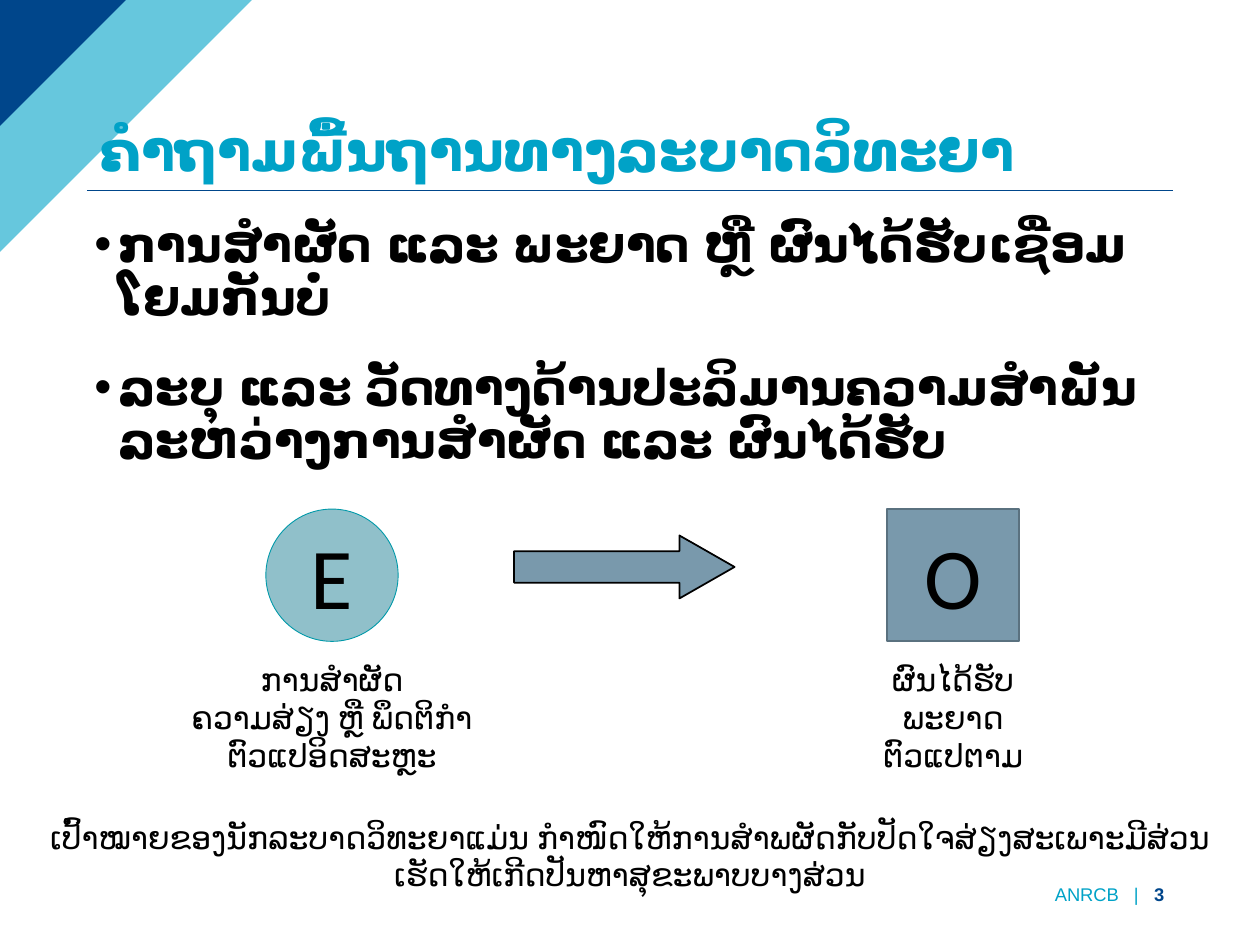
from lxml import etree
from pptx import Presentation
from pptx.dml.color import RGBColor
from pptx.enum.shapes import MSO_CONNECTOR, MSO_SHAPE
from pptx.enum.text import MSO_ANCHOR, PP_ALIGN
from pptx.oxml.ns import qn
from pptx.util import Inches, Pt

LINE = MSO_CONNECTOR.STRAIGHT
RECT, OVAL, ARROW = MSO_SHAPE.RECTANGLE, MSO_SHAPE.OVAL, MSO_SHAPE.RIGHT_ARROW
TOP, MID, LOW = MSO_ANCHOR.TOP, MSO_ANCHOR.MIDDLE, MSO_ANCHOR.BOTTOM
LEFT, MIDDLE, RIGHT = PP_ALIGN.LEFT, PP_ALIGN.CENTER, PP_ALIGN.RIGHT
NAVY, CYAN, STEEL, BLACK = "00468B", "00A2C7", "7999AC", "000000"


def color(code):
    return RGBColor.from_string(code)


class Deck:
    font = "Roboto"

    def __init__(self, wide, high):
        self.prs = Presentation()
        self.prs.slide_width, self.prs.slide_height = Inches(wide), Inches(high)
        self.slide = self.prs.slides.add_slide(self.prs.slide_layouts[6])
        self.shapes = self.slide.shapes

    def style(self, run, size, code=BLACK, bold=False, font=None):
        run.font.size, run.font.bold = Pt(size), bold
        run.font.name = font or self.font
        run.font.color.rgb = color(code)

    def rule(self, x, y, end, code, width):
        line = self.shapes.add_connector(LINE, *map(Inches, (x, y, end, y)))
        line.line.color.rgb, line.line.width = color(code), Pt(width)
        etree.SubElement(line._element.spPr, qn("a:effectLst"))

    def corner(self, size, code, alpha=100):
        pen = self.shapes.build_freeform(0, 0, scale=Inches(1))
        pen.add_line_segments([(size, 0), (0, size + 0.02)], close=True)
        shape = pen.convert_to_shape()
        shape.shadow.inherit = False
        shape.fill.solid()
        shape.fill.fore_color.rgb = color(code)
        shape.line.fill.background()
        if alpha < 100:
            tint = shape._element.spPr.find(".//" + qn("a:srgbClr"))
            etree.SubElement(tint, qn("a:alpha"), val=str(alpha * 1000))

    def text(self, box, lines, size, code=BLACK, bold=False, align=LEFT,
             anchor=TOP, space=1.0):
        shape = self.shapes.add_textbox(*map(Inches, box))
        frame = shape.text_frame
        frame.word_wrap, frame.vertical_anchor = True, anchor
        frame.text = "\n".join(lines)
        for para in frame.paragraphs:
            para.alignment, para.line_spacing = align, space
            for run in para.runs:
                self.style(run, size, code, bold)
        return frame

    def bullets(self, box, lines, size):
        frame = self.text(box, lines, size, bold=True, space=0.9)
        for para in frame.paragraphs:
            para.space_before, para.space_after = Pt(7.5), Pt(13.5)
            props = para._p.get_or_add_pPr()
            props.set("marL", str(Inches(0.19)))
            props.set("indent", str(-Inches(0.19)))
            font = etree.SubElement(props, qn("a:buFont"))
            font.set("typeface", "Arial")
            etree.SubElement(props, qn("a:buChar"), char="•")

    def block(self, kind, box, fill, edge, width, label=""):
        shape = self.shapes.add_shape(kind, *map(Inches, box))
        shape.shadow.inherit = False
        shape.fill.solid()
        shape.fill.fore_color.rgb = color(fill)
        shape.line.color.rgb, shape.line.width = color(edge), Pt(width)
        if label:
            frame = shape.text_frame
            frame.text = label
            frame.word_wrap, frame.vertical_anchor = False, MID
            para = frame.paragraphs[0]
            para.alignment = MIDDLE
            self.style(para.runs[0], 49.5, font="Calibri")
        return shape

    def footer(self, box, name, page):
        frame = self.text(box, [name], 10.5, CYAN, align=RIGHT, anchor=MID)
        frame.margin_left = frame.margin_right = Inches(0.07)
        frame.margin_top = frame.margin_bottom = Inches(0.04)
        para = frame.paragraphs[0]
        run = para.add_run()
        run.text = page
        self.style(para.runs[0], 10.5, CYAN, font="Arial")
        self.style(run, 10.5, NAVY, True, "Arial")


def main():
    deck = Deck(10, 7.5)
    deck.rule(0.69, 1.51, 9.31, NAVY, 0.75)
    deck.corner(1.62, CYAN, 60)
    deck.corner(1.37, NAVY)
    deck.text((0.69, 0.4, 8.62, 1.11), ["ຄຳຖາມພື້ນຖານທາງລະບາດວິທະຍາ"],
              32, CYAN, True, anchor=LOW, space=0.9)
    deck.bullets((0.65, 1.7, 8.62, 5.09), [
        "ການສຳຜັດ ແລະ ພະຍາດ ຫຼື ຜົນໄດ້ຮັບເຊື່ອມໂຍມກັນບໍ່",
        "ລະບຸ ແລະ ວັດທາງດ້ານປະລິມານຄວາມສຳພັນລະຫວ່າງການສຳຜັດ ແລະ ຜົນໄດ້ຮັບ",
    ], 28)
    deck.block(RECT, (7.04, 4.04, 1.05, 1.05), STEEL, "5A717F", 1, "O")
    deck.block(OVAL, (2.11, 4.04, 1.05, 1.05), "90C0CA", "0099A9", 0.5, "E")
    deck.text((0, 6.44, 10, 0.71), [
        "ເປົ້າໝາຍຂອງນັກລະບາດວິທະຍາແມ່ນ ກຳໜົດໃຫ້ການສຳພຜັດກັບປັດໃຈສ່ຽງສະເພາະ"
        "ມີສ່ວນເຮັດໃຫ້ເກີດປັນຫາສຸຂະພາບບາງສ່ວນ"], 18, align=MIDDLE)
    arrow = deck.block(ARROW, (4.08, 4.25, 1.75, 0.5), STEEL, BLACK, 1)
    arrow.adjustments[0], arrow.adjustments[1] = 0.5, 0.875
    notes = [
        (1.3, ["ການສຳຜັດ", "ຄວາມສ່ຽງ ຫຼື ພຶດຕິກຳ", "ຕົວແປອິດສະຫຼະ"]),
        (6.23, ["ຜົນໄດ້ຮັບ", "ພະຍາດ", "ຕົວແປຕາມ"]),
    ]
    for x, lines in notes:
        deck.text((x, 5.19, 2.67, 1.01), lines, 18, align=MIDDLE)
    deck.footer((8.07, 7.02, 1.24, 0.16), "ANRCB   |   ", "3")
    deck.prs.save("out.pptx")


if __name__ == "__main__":
    main()
